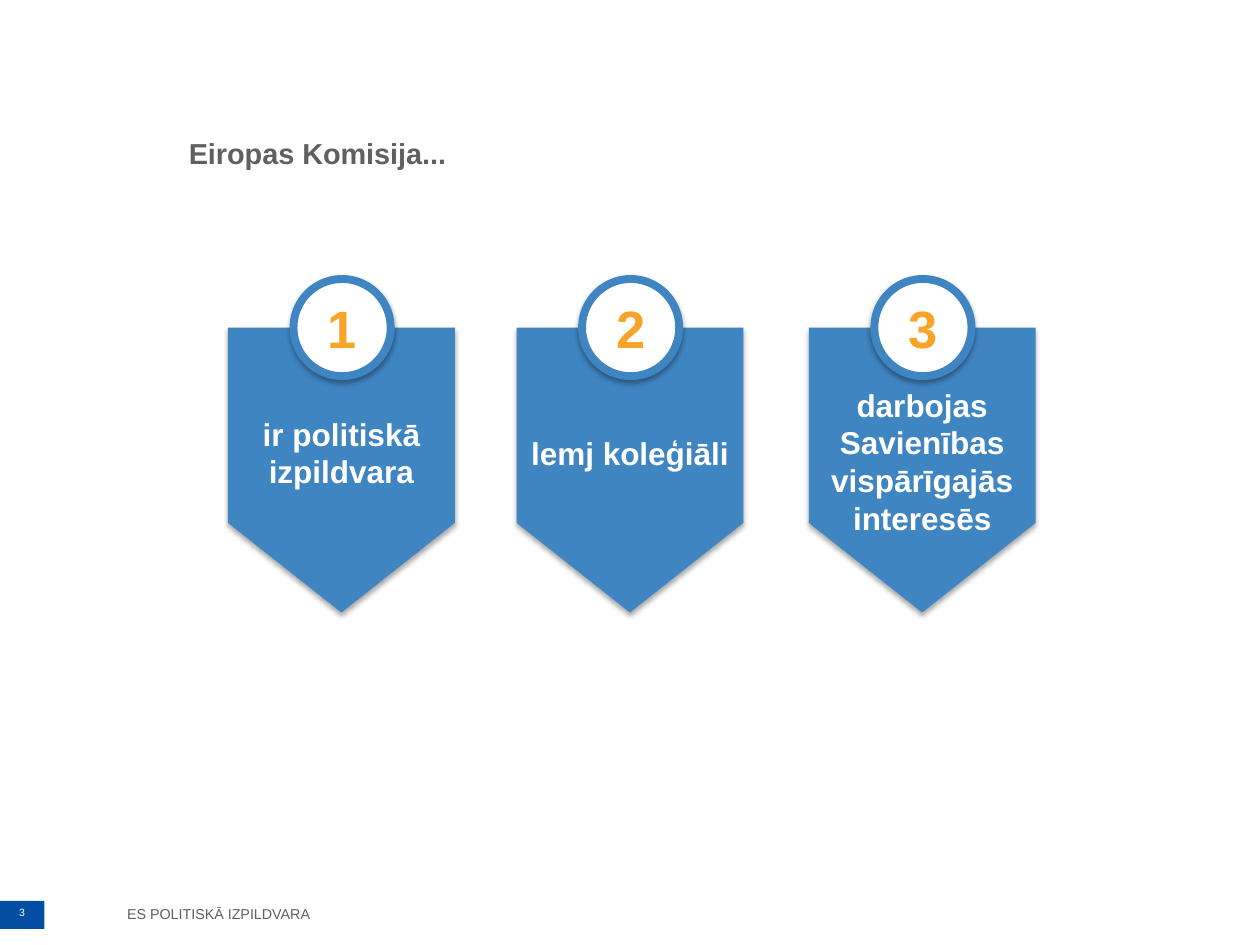
from lxml import etree
from pptx import Presentation
from pptx.dml.color import RGBColor
from pptx.enum import shapes, text
from pptx.oxml.ns import qn
from pptx.util import Pt

BLUE, NAVY, ORANGE, GREY, WHITE = "3F85C1", "034EA2", "F7A428", "606060", "FFFFFF"
PENNANT_WIDTH, CIRCLE_SIZE = 129.6, 55.5
# left edge, label, top of label
PENNANTS = [
    (130.3, "ir politiskā izpildvara", 216),
    (295.2, "lemj koleģiāli", 216),
    (462.2, "darbojas\vSavienības vispārīgajās interesēs", 221),
]


def color(hex_string):
    return RGBColor.from_string(hex_string)


def paint(shape, fill, line=None, line_width=0):
    shape.shadow.inherit = False
    shape.fill.solid()
    shape.fill.fore_color.rgb = color(fill)
    if line:
        shape.line.color.rgb = color(line)
        shape.line.width = Pt(line_width)
    else:
        shape.line.fill.background()


def add_shadow(shape):
    """Put a soft shadow straight below the shape."""
    effects = shape._element.spPr.find(qn("a:effectLst"))
    shadow = etree.SubElement(
        effects, qn("a:outerShdw"), blurRad=str(Pt(3.1)), dist=str(Pt(1.8)),
        dir="5400000", rotWithShape="0")
    black = etree.SubElement(shadow, qn("a:srgbClr"), val="000000")
    etree.SubElement(black, qn("a:alpha"), val="35000")


def write(shape, words, size, hex_color, bold=False, align=text.PP_ALIGN.CENTER,
          anchor=text.MSO_ANCHOR.TOP, margins=(7.2, 3.6), wrap=True):
    frame = shape.text_frame
    frame.word_wrap = wrap
    frame.vertical_anchor = anchor
    frame.margin_left = frame.margin_right = Pt(margins[0])
    frame.margin_top = frame.margin_bottom = Pt(margins[1])
    frame.text = words
    para = frame.paragraphs[0]
    para.alignment = align
    for span in para.runs:
        span.font.name = "Arial"
        span.font.size = Pt(size)
        span.font.bold = bold
        span.font.color.rgb = color(hex_color)
    return para


def add_box(page, left, top, width, height):
    return page.shapes.add_textbox(Pt(left), Pt(top), Pt(width), Pt(height))


def add_pennant(page, number, left, label, label_top):
    top, shoulder, tip = 187.2, 298.8, 350
    right, middle = left + PENNANT_WIDTH, left + PENNANT_WIDTH / 2
    builder = page.shapes.build_freeform(Pt(left), Pt(top))
    outline = [(right, top), (right, shoulder), (middle, tip), (left, shoulder)]
    builder.add_line_segments([(Pt(x), Pt(y)) for x, y in outline], close=True)
    pennant = builder.convert_to_shape()
    paint(pennant, BLUE)
    add_shadow(pennant)

    box = add_box(page, left, label_top, PENNANT_WIDTH, 85)
    write(box, label, 18, WHITE, True, anchor=text.MSO_ANCHOR.MIDDLE, margins=(5, 2.9))

    circle = page.shapes.add_shape(
        shapes.MSO_SHAPE.OVAL, Pt(middle - CIRCLE_SIZE / 2 + 0.4),
        Pt(top - CIRCLE_SIZE / 2), Pt(CIRCLE_SIZE), Pt(CIRCLE_SIZE))
    paint(circle, WHITE, BLUE, 4.5)
    add_shadow(circle)
    write(circle, str(number), 30, ORANGE, True, anchor=text.MSO_ANCHOR.MIDDLE)


def add_footer(page):
    box = add_box(page, 64.1, 509, 121.7, 22.3)
    para = write(box, "ES POLITISKĀ IZPILDVARA", 8.2, GREY, wrap=False)
    para.line_spacing = 1.5
    tab = page.shapes.add_shape(
        shapes.MSO_SHAPE.RECTANGLE, 0, Pt(514.8), Pt(25.4), Pt(16))
    paint(tab, NAVY)
    write(tab, "3", 6, WHITE, margins=(5, 2.9))


def main():
    deck = Presentation()
    deck.slide_width, deck.slide_height = Pt(720), Pt(540)
    page = deck.slides.add_slide(deck.slide_layouts[6])
    add_footer(page)
    for number, (left, label, label_top) in enumerate(PENNANTS, 1):
        add_pennant(page, number, left, label, label_top)
    title = add_box(page, 100.8, 74.2, 486, 25.2)
    write(title, "Eiropas Komisija...", 16.5, GREY, True, text.PP_ALIGN.LEFT)
    deck.save("out.pptx")


if __name__ == "__main__":
    main()
